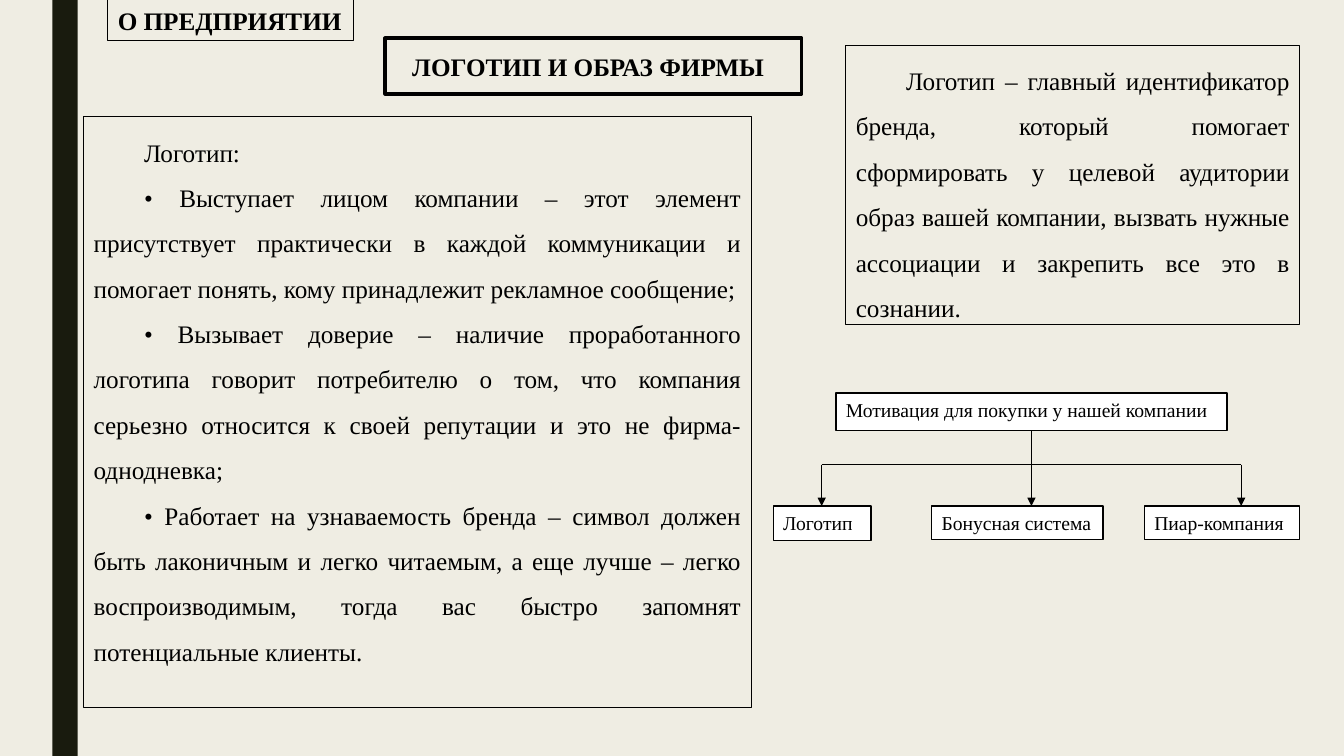
import pptx
import pptx.util
import pptx.dml.color
import pptx.enum.shapes
import pptx.enum.text
import lxml.etree
from pptx.oxml.ns import qn

Inches = pptx.util.Inches
Pt = pptx.util.Pt
RGBColor = pptx.dml.color.RGBColor
PP_ALIGN = pptx.enum.text.PP_ALIGN

THEME = {
    "background": RGBColor.from_string("EFEDE3"),
    "stripe": RGBColor.from_string("191B0E"),
    "ink": RGBColor.from_string("000000"),
    "paper": RGBColor.from_string("FFFFFF"),
    "font": "Times New Roman",
    "body": Pt(18),
    "label": Pt(14),
}

deck = pptx.Presentation()
deck.slide_width = Inches(13.33)
deck.slide_height = Inches(7.5)
slide = deck.slides.add_slide(deck.slide_layouts[6])
slide.background.fill.solid()
slide.background.fill.fore_color.rgb = THEME["background"]


def add_box(place, fill=None, line=None):
    box = slide.shapes.add_shape(
        pptx.enum.shapes.MSO_SHAPE.RECTANGLE, *map(Inches, place)
    )
    box.shadow.inherit = False
    if fill is None:
        box.fill.background()
    else:
        box.fill.solid()
        box.fill.fore_color.rgb = fill
    if line is None:
        box.line.fill.background()
    else:
        box.line.color.rgb = THEME["ink"]
        box.line.width = Pt(line)
    return box


def write(box, texts, size, bold=False, wrap=True, justified=False):
    frame = box.text_frame
    frame.word_wrap = wrap
    frame.vertical_anchor = pptx.enum.text.MSO_ANCHOR.TOP
    para_format = {"alignment": PP_ALIGN.LEFT}
    if justified:
        para_format = {"alignment": PP_ALIGN.JUSTIFY, "line_spacing": 1.5}
    for index, text in enumerate(texts):
        para = frame.add_paragraph() if index else frame.paragraphs[0]
        for name, value in para_format.items():
            setattr(para, name, value)
        if justified:
            properties = para._p.get_or_add_pPr()
            properties.set("marL", "0")
            properties.set("indent", str(Inches(0.5)))
        span = para.add_run()
        span.text = text
        font_format = {"name": THEME["font"], "size": size, "bold": bold}
        for name, value in font_format.items():
            setattr(span.font, name, value)
        span.font.color.rgb = THEME["ink"]


add_box((0.52, 0, 0.25, 7.5), fill=THEME["stripe"])

section = add_box((1.07, 0, 2.44, 0.4), line=0.75)
write(section, ["О ПРЕДПРИЯТИИ"], THEME["body"], bold=True, wrap=False)

title = slide.shapes.add_textbox(*map(Inches, (3.99, 0.46, 7.62, 0.4)))
write(title, ["ЛОГОТИП И ОБРАЗ ФИРМЫ"], THEME["body"], bold=True)
add_box((3.82, 0.38, 4.13, 0.55), line=2.75)

passages = [
    ((8.39, 0.45, 4.5, 2.77), [
        "Логотип – главный идентификатор бренда, который помогает сформировать "
        "у целевой аудитории образ вашей компании, вызвать нужные ассоциации "
        "и закрепить все это в сознании.",
    ]),
    ((0.83, 1.16, 6.62, 5.86), [
        "Логотип:",
        "• Выступает лицом компании – этот элемент присутствует практически "
        "в каждой коммуникации и помогает понять, кому принадлежит рекламное "
        "сообщение;",
        "• Вызывает доверие – наличие проработанного логотипа говорит "
        "потребителю о том, что компания серьезно относится к своей репутации "
        "и это не фирма-однодневка;",
        "• Работает на узнаваемость бренда – символ должен быть лаконичным "
        "и легко читаемым, а еще лучше – легко воспроизводимым, тогда вас "
        "быстро запомнят потенциальные клиенты.",
    ]),
]
for place, texts in passages:
    write(add_box(place, line=0.75), texts, THEME["body"], justified=True)

scheme = [
    ((8.29, 3.9, 3.88, 0.37), "Мотивация для покупки у нашей компании"),
    ((7.67, 5.02, 0.97, 0.34), "Логотип"),
    ((9.24, 5.02, 1.7, 0.33), "Бонусная система"),
    ((11.35, 5.02, 1.54, 0.33), "Пиар-компания"),
]
for place, text in scheme:
    write(add_box(place, fill=THEME["paper"], line=1), [text], THEME["label"])

root_bottom, rail, branch_top = 4.27, 4.61, 5.02
left, middle, right = 8.15, 10.23, 12.31
links = [
    (left, rail, right, rail, False),
    (middle, root_bottom, middle, branch_top, True),
    (right, rail, right, branch_top, True),
    (left, rail, left, branch_top, True),
]
for *ends, arrow in links:
    link = slide.shapes.add_connector(
        pptx.enum.shapes.MSO_CONNECTOR.STRAIGHT, *map(Inches, ends)
    )
    link.line.color.rgb = THEME["ink"]
    link.line.width = Pt(0.5)
    if arrow:
        outline = link.line._get_or_add_ln()
        lxml.etree.SubElement(outline, qn("a:tailEnd"), type="triangle")
    lxml.etree.SubElement(link._element.spPr, qn("a:effectLst"))

deck.save("out.pptx")
